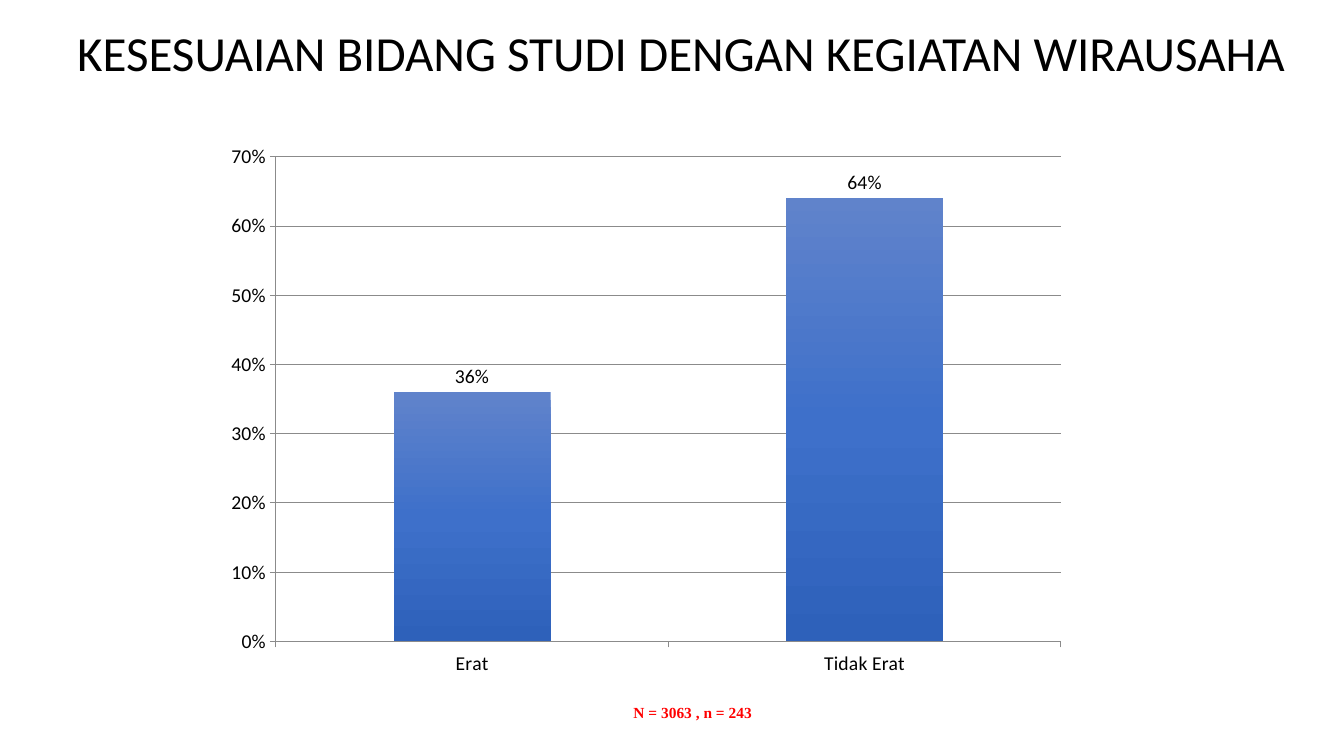
from copy import deepcopy

from lxml.etree import SubElement
from pptx import Presentation
from pptx.chart.data import CategoryChartData
from pptx.dml.color import RGBColor
from pptx.enum.chart import XL_CHART_TYPE, XL_LABEL_POSITION, XL_TICK_MARK
from pptx.enum.text import MSO_ANCHOR, MSO_AUTO_SIZE, PP_ALIGN
from pptx.oxml.ns import qn
from pptx.util import Inches, Pt


def style(font, name, size, color, bold=False):
    font.name = name
    font.size = Pt(size)
    font.bold = bold
    font.color.rgb = RGBColor.from_string(color)


prs = Presentation()
prs.slide_width = Inches(13.33)
prs.slide_height = Inches(7.5)
slide = prs.slides.add_slide(prs.slide_layouts[5])

# Title
title = slide.shapes.title
title.left, title.top = Inches(0.55), Inches(0.1)
title.width, title.height = Inches(12.42), Inches(0.9)
frame = title.text_frame
frame.text = "KESESUAIAN BIDANG STUDI DENGAN KEGIATAN WIRAUSAHA"
frame.auto_size = MSO_AUTO_SIZE.NONE
frame.vertical_anchor = MSO_ANCHOR.MIDDLE
para = frame.paragraphs[0]
para.alignment = PP_ALIGN.CENTER
para.line_spacing = 0.9
style(para.runs[0].font, "Calibri", 35, "000000")

# Sample size
table = slide.shapes.add_table(
    1, 1, Inches(6.07), Inches(6.94), Inches(1.6), Inches(0.33)).table
table.first_row = False
table.horz_banding = False
cell = table.cell(0, 0)
cell.fill.background()
cell.text_frame.text = "N = 3063 , n = 243"
para = cell.text_frame.paragraphs[0]
para.alignment = PP_ALIGN.CENTER
style(para.runs[0].font, "Times New Roman", 11, "FF0000", True)

# Column chart
data = CategoryChartData(number_format="0%")
data.categories = ["Erat", "Tidak Erat"]
data.add_series("Series 1", [0.36, 0.64])
chart = slide.shapes.add_chart(
    XL_CHART_TYPE.COLUMN_CLUSTERED, Inches(0.55), Inches(1.39),
    Inches(12.42), Inches(5.36), data).chart
chart.has_title = False
chart.has_legend = False
style(chart.font, "Calibri", 14, "000000")

scale = chart.value_axis
scale.minimum_scale = 0
scale.maximum_scale = 0.7
scale.major_unit = 0.1
scale.has_major_gridlines = True
scale.tick_labels.number_format = "0%"
scale.tick_labels.number_format_is_linked = False
for axis in (scale, chart.category_axis):
    axis.major_tick_mark = XL_TICK_MARK.OUTSIDE
    axis.minor_tick_mark = XL_TICK_MARK.NONE
for part in (scale, chart.category_axis, scale.major_gridlines):
    part.format.line.width = Pt(0.75)
    part.format.line.color.rgb = RGBColor.from_string("8B8B8B")

plot = chart.plots[0]
plot.gap_width = 150
plot.vary_by_categories = False
plot.has_data_labels = True
labels = plot.data_labels
labels.show_value = True
labels.number_format = "0%"
labels.number_format_is_linked = False
labels.position = XL_LABEL_POSITION.OUTSIDE_END

# Three-stop gradient, running downwards
bars = plot.series[0]
fill = bars.format.fill
fill.gradient()
fill.gradient_angle = 270
stops = bars._element.find(".//" + qn("a:gsLst"))
stops.append(deepcopy(stops[-1]))
shades = [(0, "6083CB"), (0.5, "3E70CA"), (1, "2E61BA")]
for stop, (place, color) in zip(fill.gradient_stops, shades):
    stop.position = place
    stop.color.rgb = RGBColor.from_string(color)

# Inner plot area, as fractions of the chart
area = chart._chartSpace.find(".//" + qn("c:plotArea"))
for old in area.findall(qn("c:layout")):
    area.remove(old)
layout = SubElement(area, qn("c:layout"))
area.insert(0, layout)
manual = SubElement(layout, qn("c:manualLayout"))
for tag, value in [("layoutTarget", "inner"), ("xMode", "edge"),
                   ("yMode", "edge"), ("x", "0.176"), ("y", "0.031"),
                   ("w", "0.627"), ("h", "0.897")]:
    SubElement(manual, qn("c:" + tag)).set("val", value)

prs.save("out.pptx")
